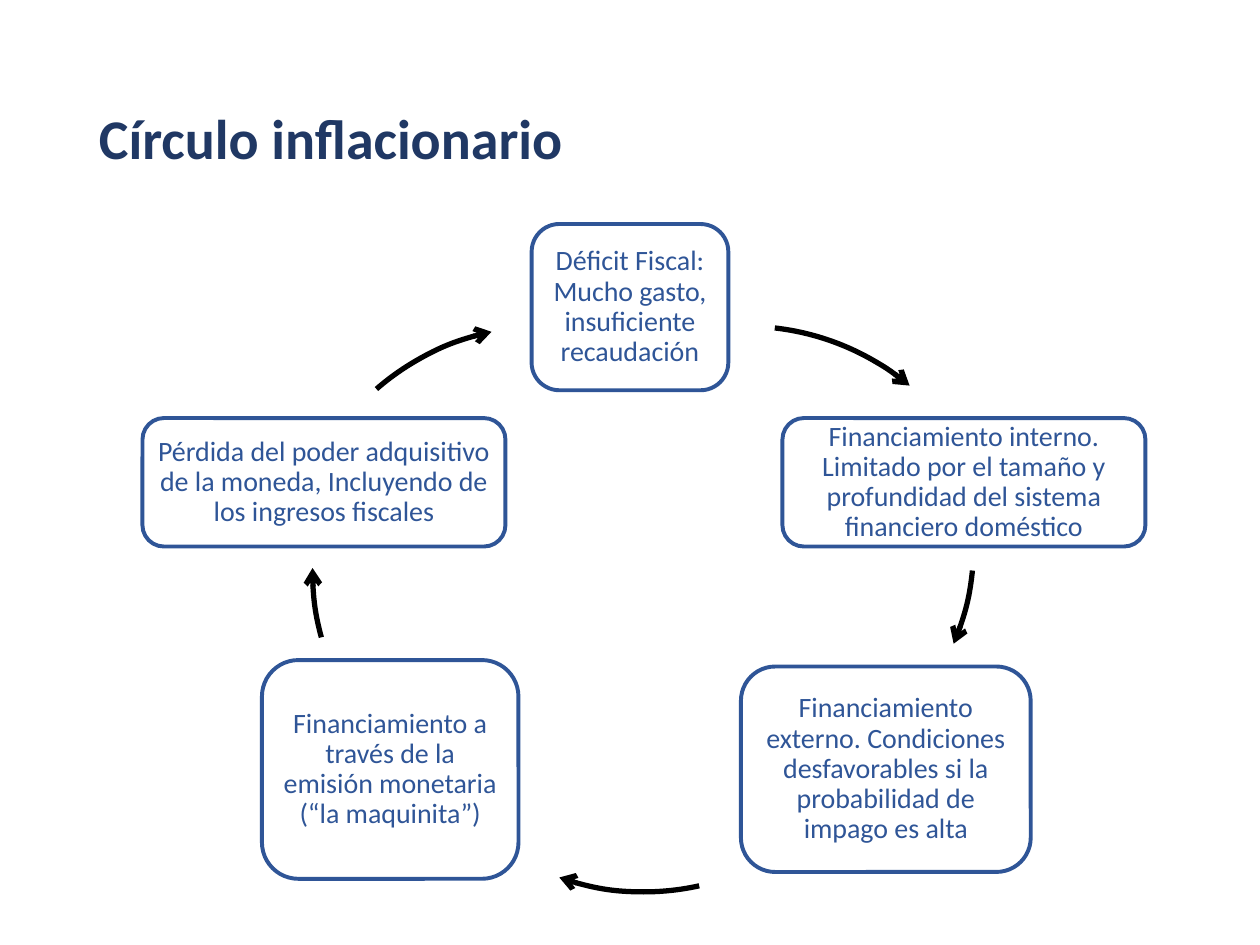
from lxml import etree
from pptx import Presentation
from pptx.dml.color import RGBColor
from pptx.enum.shapes import MSO_SHAPE
from pptx.enum.text import MSO_ANCHOR, PP_ALIGN
from pptx.oxml.ns import qn
from pptx.util import Pt

ROUNDED = MSO_SHAPE.ROUNDED_RECTANGLE
ARC = MSO_SHAPE.ARC
MIDDLE = MSO_ANCHOR.MIDDLE
LEFT = PP_ALIGN.LEFT
CENTER = PP_ALIGN.CENTER

FONT = "Calibri"
NAVY = "203864"
BLUE = "2F5597"
WHITE = "FFFFFF"
BLACK = "000000"
ARC_DIAMETER = 292.3
ANGLE_UNIT = 0.6

STEPS = [
    ("Déficit Fiscal: Mucho gasto, insuficiente recaudación",
     (303.8, 128, 112.4, 95)),
    ("Financiamiento interno. Limitado por el tamaño y profundidad del sistema "
     "financiero doméstico", (447.1, 238.9, 207.4, 73.4)),
    ("Financiamiento externo. Condiciones desfavorables si la probabilidad de "
     "impago es alta", (423.4, 380.9, 165.6, 117.4)),
    ("Financiamiento a través de la emisión monetaria (“la maquinita”)",
     (149.7, 377.2, 146.6, 125)),
    ("Pérdida del poder adquisitivo de la moneda, Incluyendo de los ingresos "
     "fiscales", (81.4, 238.9, 207.4, 73.4)),
]

ARROWS = [
    ((280.1, 186.5), 276.5, 309.8),
    ((264.2, 164.9), 5.9, 22.9),
    ((221.8, 217.4), 77.5, 109.3),
    ((178.6, 180), 164.9, 180.6),
    ((164.9, 186.5), 229, 258.1),
]


def color(value):
    return RGBColor.from_string(value)


def write(shape, text, size, tone, align, bold=False):
    frame = shape.text_frame
    frame.word_wrap = True
    frame.vertical_anchor = MIDDLE
    frame.text = text
    para = frame.paragraphs[0]
    para.alignment = align
    para.line_spacing = 0.9
    font = para.runs[0].font
    font.name = FONT
    font.size = Pt(size)
    font.bold = bold
    font.color.rgb = color(tone)


def add_title(page, box, text):
    title = page.shapes.add_textbox(*map(Pt, box))
    write(title, text, 32, NAVY, LEFT, bold=True)


def add_step(page, box, text):
    step = page.shapes.add_shape(ROUNDED, *map(Pt, box))
    step.shadow.inherit = False
    step.fill.solid()
    step.fill.fore_color.rgb = color(WHITE)
    step.line.color.rgb = color(BLUE)
    step.line.width = Pt(2.25)
    write(step, text, 16, BLUE, CENTER)
    frame = step.text_frame
    frame.margin_left = frame.margin_right = Pt(4.8)
    frame.margin_top = frame.margin_bottom = Pt(4.8)


def add_arrow(page, box, start, end):
    arrow = page.shapes.add_shape(ARC, *map(Pt, box))
    arrow.adjustments[0] = start * ANGLE_UNIT * 100 / 100
    arrow.adjustments[1] = end * ANGLE_UNIT * 100 / 100
    arrow.shadow.inherit = False
    arrow.fill.background()
    arrow.line.color.rgb = color(BLACK)
    arrow.line.width = Pt(3)
    line = arrow.line._get_or_add_ln()
    etree.SubElement(line, qn("a:tailEnd")).set("type", "arrow")


def add_cycle(page, steps, arrows):
    for (text, box), ((left, top), start, end) in zip(steps, arrows):
        add_step(page, box, text)
        add_arrow(page, (left, top, ARC_DIAMETER, ARC_DIAMETER), start, end)


def main():
    deck = Presentation()
    deck.slide_width, deck.slide_height = Pt(720), Pt(540)
    page = deck.slides.add_slide(deck.slide_layouts[6])
    add_title(page, (49.5, 28.8, 621, 104.4), "Círculo inflacionario")
    add_cycle(page, STEPS, ARROWS)
    deck.save("out.pptx")


if __name__ == "__main__":
    main()
